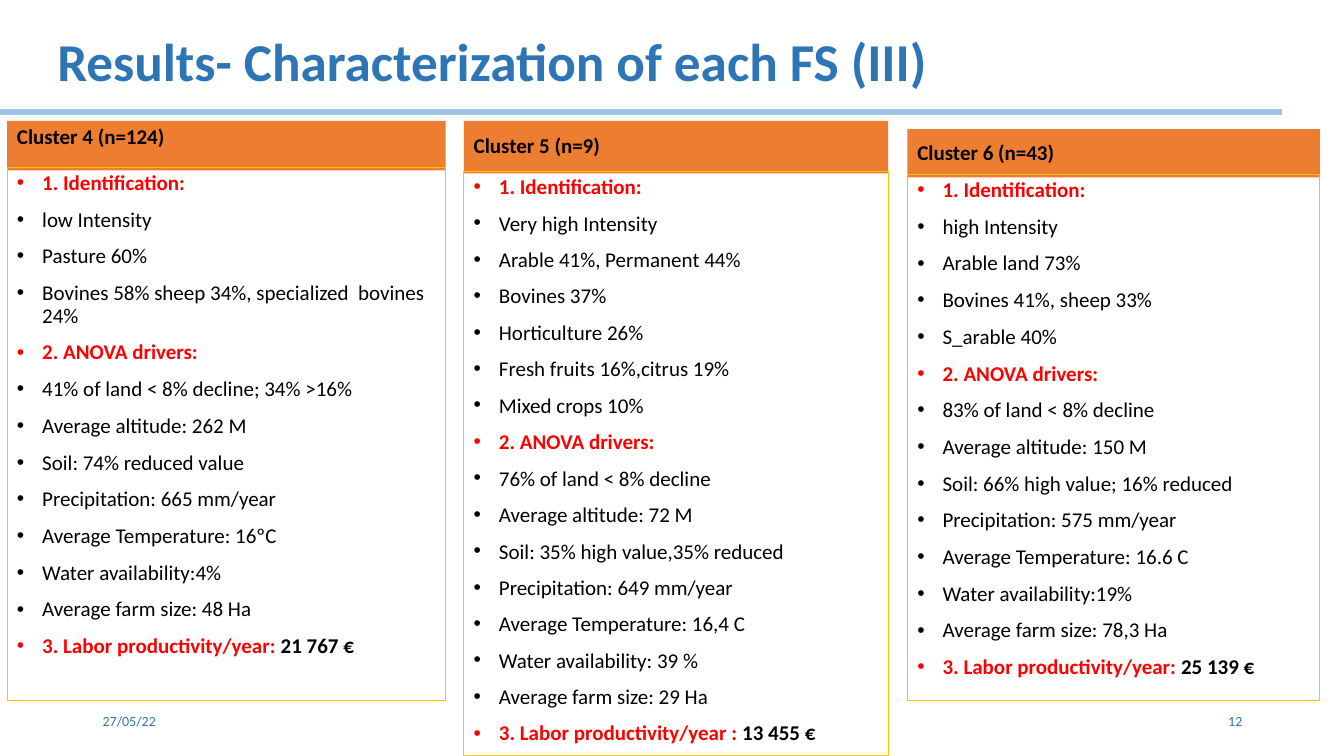
"""Build the slide that characterizes farming system clusters 4 to 6."""
import dataclasses

import lxml.etree
import pptx
import pptx.dml.color
import pptx.enum.shapes
import pptx.enum.text
import pptx.oxml.ns
import pptx.util

Inches = pptx.util.Inches
Pt = pptx.util.Pt
qn = pptx.oxml.ns.qn
Anchor = pptx.enum.text.MSO_ANCHOR
Align = pptx.enum.text.PP_ALIGN


@dataclasses.dataclass(frozen=True)
class Theme:
    """Colours, font and type sizes of the slide."""
    font: str = "Calibri"
    title: str = "2E75B6"
    rule: str = "9DC3E6"
    header: str = "ED7D31"
    border: str = "FFC000"
    heading: str = "FF0000"
    text: str = "000000"
    title_size: int = 38
    body_size: int = 15
    footer_size: int = 10


def rgb(value):
    """Return the colour for a hexadecimal value."""
    return pptx.dml.color.RGBColor.from_string(value)


class SlideBuilder:
    """Draws themed elements on one slide."""

    def __init__(self, slide, theme):
        """Keep the slide and its theme."""
        self.slide = slide
        self.theme = theme

    def style(self, paragraph, size, color, bold=False):
        """Set the font of a whole paragraph."""
        font = paragraph.font
        font.name, font.size, font.bold = self.theme.font, Pt(size), bold
        font.color.rgb = rgb(color)

    def text(self, box, text, size, bold=False, anchor=Anchor.MIDDLE, align=Align.LEFT):
        """Add a one-line text box and return its paragraph."""
        frame = self.slide.shapes.add_textbox(*map(Inches, box)).text_frame
        frame.word_wrap = True
        frame.vertical_anchor = anchor
        paragraph = frame.paragraphs[0]
        paragraph.text = text
        paragraph.alignment = align
        self.style(paragraph, size, self.theme.title, bold)
        return paragraph

    def rectangle(self, box, anchor, fill=None, line=None):
        """Add a rectangle and return its text frame."""
        kind = pptx.enum.shapes.MSO_SHAPE.RECTANGLE
        shape = self.slide.shapes.add_shape(kind, *map(Inches, box))
        shape.shadow.inherit = False
        if fill:
            shape.fill.solid()
            shape.fill.fore_color.rgb = rgb(fill)
        else:
            shape.fill.background()
        if line:
            shape.line.color.rgb = rgb(line)
            shape.line.width = Pt(0.75)
        else:
            shape.line.fill.background()
        frame = shape.text_frame
        frame.word_wrap = True
        frame.vertical_anchor = anchor
        return frame

    def rule(self, left, right, top):
        """Add the horizontal line under the title."""
        kind = pptx.enum.shapes.MSO_CONNECTOR.STRAIGHT
        connector = self.slide.shapes.add_connector(
            kind, Inches(left), Inches(top), Inches(right), Inches(top))
        connector.line.color.rgb = rgb(self.theme.rule)
        connector.line.width = Pt(4)
        lxml.etree.SubElement(connector._element.spPr, qn("a:effectLst"))

    def bullet(self, paragraph, color):
        """Give a paragraph a hanging bullet."""
        properties = paragraph._p.get_or_add_pPr()
        properties.set("marL", str(Inches(0.25)))
        properties.set("indent", str(-Inches(0.25)))
        bullet_color = lxml.etree.SubElement(properties, qn("a:buClr"))
        lxml.etree.SubElement(bullet_color, qn("a:srgbClr"), val=color)
        lxml.etree.SubElement(properties, qn("a:buFont"), typeface="Arial")
        lxml.etree.SubElement(properties, qn("a:buChar"), char="•")

    def item(self, paragraph, text, spacing=0.9, heading=False, value=""):
        """Fill a bulleted paragraph, with an optional value after a heading."""
        color = self.theme.heading if heading else self.theme.text
        paragraph.alignment = Align.LEFT
        paragraph.line_spacing = spacing
        paragraph.space_before = Pt(10)
        self.bullet(paragraph, color)
        self.style(paragraph, self.theme.body_size, color, heading)
        paragraph.add_run().text = text
        if value:
            run = paragraph.add_run()
            run.text = value
            run.font.color.rgb = rgb(self.theme.text)

    def cluster(self, cluster):
        """Add the header and the bulleted panel of one cluster."""
        left, width = cluster.left, cluster.width
        header = self.rectangle((left, cluster.top, width, cluster.header_height),
                                cluster.anchor, fill=self.theme.header)
        paragraph = header.paragraphs[0]
        paragraph.text = cluster.name
        paragraph.alignment = Align.LEFT
        paragraph.line_spacing = 0.9
        self.style(paragraph, self.theme.body_size, self.theme.text, True)

        height = cluster.bottom - cluster.body_top
        body = self.rectangle((left, cluster.body_top, width, height),
                              Anchor.TOP, line=self.theme.border)
        self.item(body.paragraphs[0], "1. Identification:", heading=True)
        for text in cluster.identification:
            self.item(body.add_paragraph(), text, cluster.spacing)
        self.item(body.add_paragraph(), "2. ANOVA drivers:", heading=True)
        for text in cluster.drivers:
            self.item(body.add_paragraph(), text, cluster.spacing)
        self.item(body.add_paragraph(), cluster.label, heading=True,
                  value=cluster.productivity)


@dataclasses.dataclass(frozen=True)
class Cluster:
    """Place and content of one cluster column."""
    name: str
    left: float
    width: float
    top: float
    header_height: float
    body_top: float
    identification: tuple
    drivers: tuple
    productivity: str
    bottom: float = 6.95
    label: str = "3. Labor productivity/year: "
    anchor: Anchor = Anchor.MIDDLE
    spacing: float = 0.9


CLUSTERS = (
    Cluster("Cluster 4 (n=124)", 0.07, 4.35, 1.2, 0.49, 1.66,
            ("low Intensity", "Pasture 60%",
             "Bovines 58% sheep 34%, specialized  bovines 24%"),
            ("41% of land < 8% decline; 34% >16%", "Average altitude: 262 M",
             "Soil: 74% reduced value", "Precipitation: 665 mm/year",
             "Average Temperature: 16ºC", "Water availability:4%",
             "Average farm size: 48 Ha"),
            "21 767 €", anchor=Anchor.TOP),
    Cluster("Cluster 5 (n=9)", 4.6, 4.21, 1.2, 0.52, 1.7,
            ("Very high Intensity", "Arable 41%, Permanent 44%", "Bovines 37%",
             "Horticulture 26%", "Fresh fruits 16%,citrus 19%", "Mixed crops 10%"),
            ("76% of land < 8% decline", "Average altitude: 72 M",
             "Soil: 35% high value,35% reduced", "Precipitation: 649 mm/year",
             "Average Temperature: 16,4 C", "Water availability: 39 %",
             "Average farm size: 29 Ha"),
            "13 455 €", bottom=7.5, label="3. Labor productivity/year : ",
            spacing=Pt(16)),
    Cluster("Cluster 6 (n=43)", 9, 4.09, 1.28, 0.48, 1.73,
            ("high Intensity", "Arable land 73%", "Bovines 41%, sheep 33%",
             "S_arable 40%"),
            ("83% of land < 8% decline", "Average altitude: 150 M",
             "Soil: 66% high value; 16% reduced", "Precipitation: 575 mm/year",
             "Average Temperature: 16.6 C", "Water availability:19%",
             "Average farm size: 78,3 Ha"),
            "25 139 €"),
)


def main():
    """Build and save the presentation."""
    presentation = pptx.Presentation()
    presentation.slide_width, presentation.slide_height = Inches(13.33), Inches(7.5)
    theme = Theme()
    builder = SlideBuilder(
        presentation.slides.add_slide(presentation.slide_layouts[6]), theme)
    builder.text((0.92, 6.95, 3, 0.4), "27/05/22", theme.footer_size)
    builder.text((9.42, 6.95, 3, 0.4), "12", theme.footer_size, align=Align.RIGHT)
    for cluster in CLUSTERS:
        builder.cluster(cluster)
    builder.rule(0, 12.72, 1.11)
    title = builder.text((0.47, 0.17, 12.8, 0.77), "Results- Characterization of each FS (III)",
                         theme.title_size, bold=True, anchor=Anchor.TOP)
    title.line_spacing = 1.1
    title.space_after = Pt(8)
    presentation.save("out.pptx")


if __name__ == "__main__":
    main()
